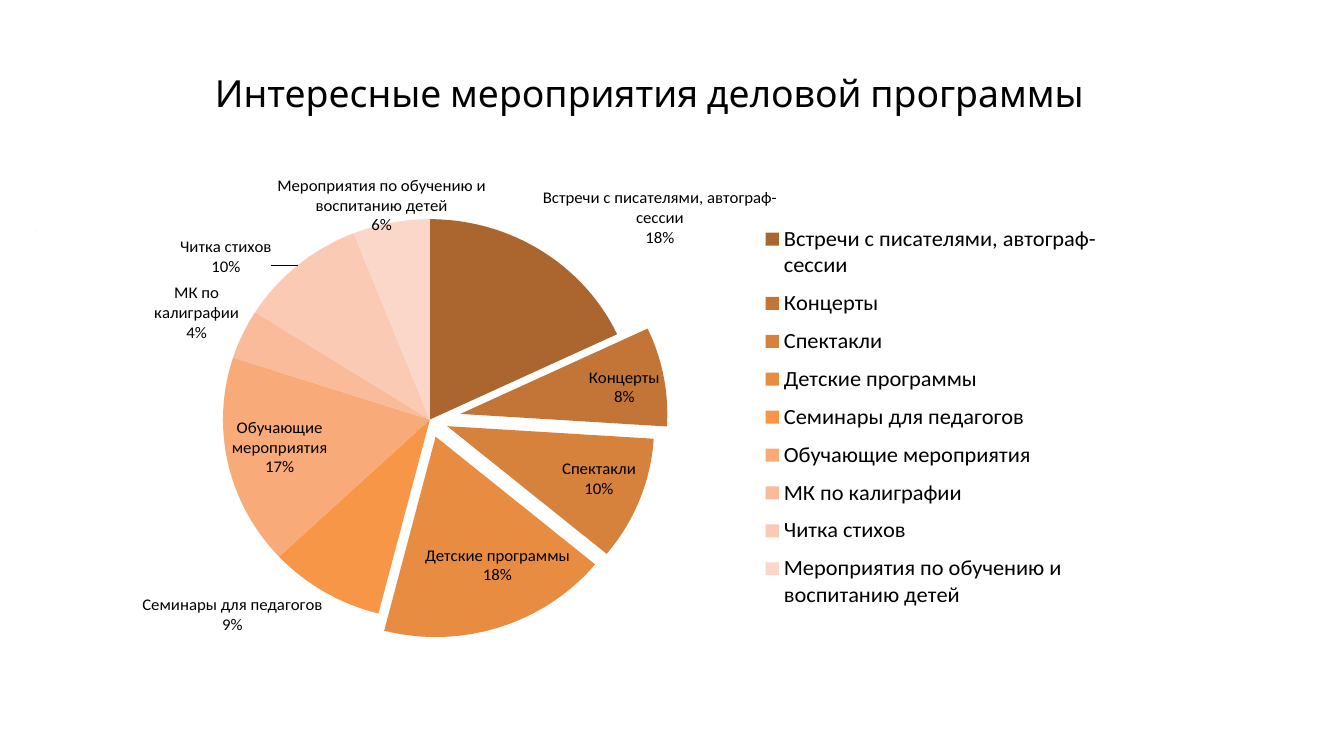
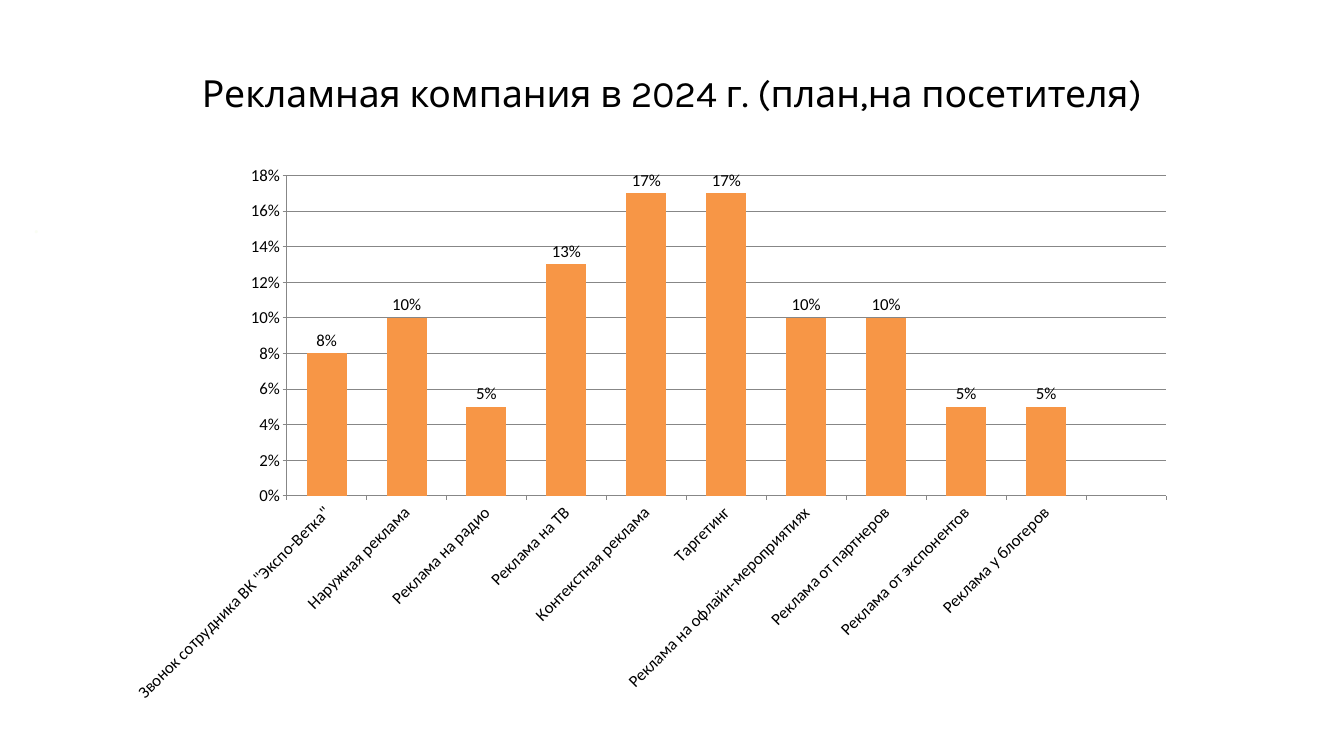
from pptx import Presentation
from pptx.chart.data import CategoryChartData
from pptx.dml.color import RGBColor
from pptx.enum.chart import XL_CHART_TYPE, XL_LABEL_POSITION, XL_LEGEND_POSITION, XL_TICK_MARK
from pptx.enum.text import PP_ALIGN
from pptx.oxml import parse_xml
from pptx.oxml.ns import nsdecls, qn
from pptx.util import Inches, Pt

PIE = XL_CHART_TYPE.PIE
COLUMN = XL_CHART_TYPE.COLUMN_CLUSTERED
OUTSIDE = XL_LABEL_POSITION.OUTSIDE_END
INSIDE = XL_LABEL_POSITION.INSIDE_END
LEGEND_RIGHT = XL_LEGEND_POSITION.RIGHT
TICK_OUT = XL_TICK_MARK.OUTSIDE
CENTER = PP_ALIGN.CENTER
LEFT = PP_ALIGN.LEFT

COLORS = {"text": "000000", "faint": "FAFDF4", "bar": "F79646", "axis": "878787"}
TITLE_STYLE = {"size": 40, "face": "Karla", "color": "text"}
MARK_STYLE = {"size": 25.5, "face": "Lato", "color": "faint"}
CHART_STYLE = {"size": 18, "face": "Calibri", "color": "text"}
LEGEND_STYLE = {**CHART_STYLE, "size": 24}

EVENTS = [
    ("Встречи с писателями, автограф-сессии", 18, "AB6630", 0, OUTSIDE, None),
    ("Концерты", 8, "C27537", 15, INSIDE, (0, -0.02)),
    ("Спектакли", 10, "D6813C", 9, INSIDE, None),
    ("Детские программы", 18, "E88C41", 9, INSIDE, (0.06, -0.08)),
    ("Семинары для педагогов", 9, "F79646", 0, OUTSIDE, None),
    ("Обучающие мероприятия", 17, "F8AA79", 0, INSIDE, (0, 0.03)),
    ("МК по калиграфии", 4, "F9BB99", 0, OUTSIDE, (0, 0.02)),
    ("Читка стихов", 10, "FACAB5", 0, OUTSIDE, (-0.02, 0.03)),
    ("Мероприятия по обучению и воспитанию детей", 6, "FBD7CA", 0, OUTSIDE, (0.08, 0)),
]
ADVERTISING = [
    ('Звонок сотрудника ВК "Экспо-Ветка"', 0.08),
    ("Наружная реклама", 0.1),
    ("Реклама на радио", 0.05),
    ("Реклама на ТВ", 0.13),
    ("Контекстная реклама", 0.17),
    ("Таргетинг", 0.17),
    ("Реклама на офлайн-мероприятиях", 0.1),
    ("Реклама от партнеров", 0.1),
    ("Реклама от экспонентов", 0.05),
    ("Реклама у блогеров", 0.05),
    ("", None),
]


def rgb(name):
    return RGBColor.from_string(COLORS.get(name, name))


def apply_format(target, values):
    for name, value in values.items():
        setattr(target, name, value)


def style_font(font, size, face, color):
    apply_format(font, {"size": Pt(size), "name": face, "bold": False})
    font.color.rgb = rgb(color)


def add_text(slide, text, box, style, align):
    frame = slide.shapes.add_textbox(*map(Inches, box)).text_frame
    apply_format(frame, {"word_wrap": True, "margin_left": 0, "margin_right": 0,
                         "margin_top": 0, "margin_bottom": 0})
    paragraph = frame.paragraphs[0]
    paragraph.alignment = align
    run = paragraph.add_run()
    run.text = text
    style_font(run.font, **style)


def add_titled_slide(deck, title, left, width):
    slide = deck.slides.add_slide(deck.slide_layouts[6])
    add_text(slide, title, (left, 1.04, width, 0.67), TITLE_STYLE, CENTER)
    add_text(slide, ".", (0.5, 3.12, 8.51, 0.86), MARK_STYLE, LEFT)
    return slide


def add_series_chart(slide, kind, box, categories, values, number_format):
    data = CategoryChartData(number_format=number_format)
    data.categories = categories
    data.add_series("Series 1", values)
    chart = slide.shapes.add_chart(kind, *map(Inches, box), data).chart
    chart.has_title = False
    style_font(chart.font, **CHART_STYLE)
    return chart


def set_layout(element, position, settings):
    for old_layout in element.findall(qn("c:layout")):
        element.remove(old_layout)
    entries = "".join(f'<c:{key} val="{value}"/>' for key, value in settings.items())
    element.insert(position, parse_xml(
        f'<c:layout {nsdecls("c")}><c:manualLayout>{entries}'
        "</c:manualLayout></c:layout>"))


def edge_box(x, y, w, h):
    return {"xMode": "edge", "yMode": "edge", "x": x, "y": y, "w": w, "h": h}


def format_slice(series, index, color, explosion, label_position, label_shift):
    point = series.points[index]
    point.format.fill.solid()
    point.format.fill.fore_color.rgb = rgb(color)
    if explosion:
        slice_xml = series._element.findall(qn("c:dPt"))[index]
        slice_xml.find(qn("c:spPr")).addprevious(
            parse_xml(f'<c:explosion {nsdecls("c")} val="{explosion}"/>'))
    style_font(point.data_label.font, **CHART_STYLE)
    point.data_label.position = label_position
    label_xml = series._element.find(qn("c:dLbls")).findall(qn("c:dLbl"))[index]
    for flag, shown in {"showVal": 0, "showCatName": 1, "showPercent": 1}.items():
        label_xml.find(qn(f"c:{flag}")).set("val", str(shown))
    if label_shift:
        set_layout(label_xml, 1, dict(zip("xy", label_shift)))


def add_events_pie(slide):
    names, shares, *slice_formats = zip(*EVENTS)
    chart = add_series_chart(slide, PIE, (1.25, 2.38, 17.75, 7.42),
                             names, shares, "General")
    chart.plots[0].vary_by_categories = True
    series = chart.plots[0].series[0]
    apply_format(series.data_labels, {
        "show_value": False, "show_category_name": True, "show_percentage": True,
        "number_format": "0%", "number_format_is_linked": False})
    for index, slice_format in enumerate(zip(*slice_formats)):
        format_slice(series, index, *slice_format)
    chart.has_legend = True
    apply_format(chart.legend, {"position": LEGEND_RIGHT, "include_in_layout": False})
    style_font(chart.legend.font, **LEGEND_STYLE)
    set_layout(chart.legend._element, 1, edge_box(0.56, 0.08, 0.3, 0.84))
    plot_area = chart._chartSpace.chart.plotArea
    set_layout(plot_area, 0, {"layoutTarget": "inner", **edge_box(0, 0.09, 0.58, 0.83)})


def add_advertising_columns(slide):
    names, shares = zip(*ADVERTISING)
    chart = add_series_chart(slide, COLUMN, (1.67, 2.29, 16, 8.33),
                             names, shares, "0%")
    chart.has_legend = False
    plot = chart.plots[0]
    apply_format(plot, {"gap_width": 100, "vary_by_categories": False,
                        "has_data_labels": True})
    apply_format(plot.data_labels, {
        "show_value": True, "position": OUTSIDE,
        "number_format": "0%", "number_format_is_linked": False})
    style_font(plot.data_labels.font, **CHART_STYLE)
    bars = plot.series[0].format.fill
    bars.solid()
    bars.fore_color.rgb = rgb("bar")
    shares_axis, channels_axis = chart.value_axis, chart.category_axis
    apply_format(shares_axis, {"minimum_scale": 0, "maximum_scale": 0.18,
                               "major_unit": 0.02, "has_major_gridlines": True})
    apply_format(shares_axis.tick_labels, {"number_format": "0%",
                                           "number_format_is_linked": False})
    for axis in (shares_axis, channels_axis):
        axis.major_tick_mark = TICK_OUT
        style_font(axis.tick_labels.font, **CHART_STYLE)
    for ruled in (shares_axis, channels_axis, shares_axis.major_gridlines):
        ruled.format.line.color.rgb = rgb("axis")
        ruled.format.line.width = Pt(0.75)
    channels_axis._element.find(qn("c:txPr")).find(qn("a:bodyPr")).set("rot", "-2700000")


def main():
    deck = Presentation()
    apply_format(deck, {"slide_width": Inches(20), "slide_height": Inches(11.25)})
    add_events_pie(add_titled_slide(
        deck, "Интересные мероприятия деловой программы", 0.83, 17.67))
    add_advertising_columns(add_titled_slide(
        deck, "Рекламная компания в 2024 г. (план,на посетителя)", 0.71, 18.58))
    deck.save("out.pptx")


if __name__ == "__main__":
    main()
